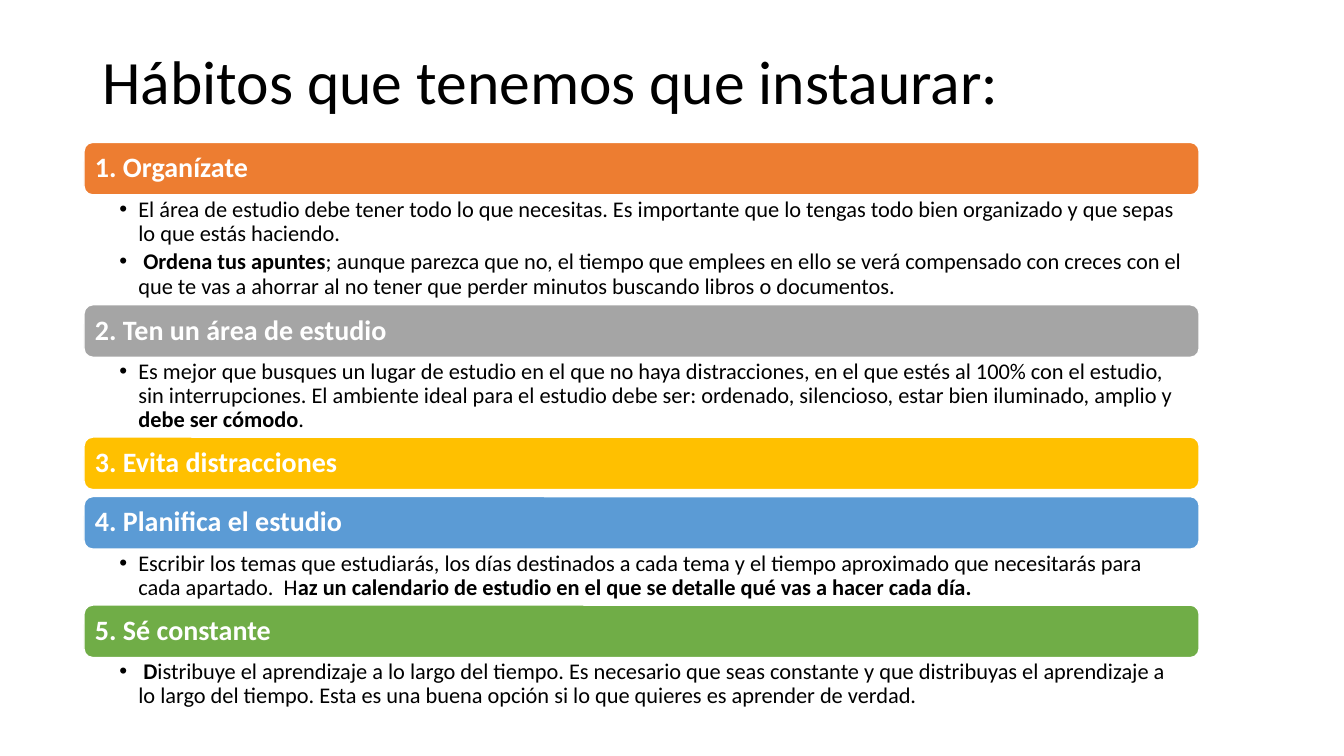
from lxml import etree
from pptx import Presentation
from pptx.dml.color import RGBColor
from pptx.enum.shapes import MSO_SHAPE
from pptx.enum.text import MSO_ANCHOR, MSO_AUTO_SIZE, PP_ALIGN
from pptx.oxml.ns import qn
from pptx.util import Pt

ROUND = MSO_SHAPE.ROUNDED_RECTANGLE
TOP, MIDDLE = MSO_ANCHOR.TOP, MSO_ANCHOR.MIDDLE
LEFT = PP_ALIGN.LEFT
FIXED = MSO_AUTO_SIZE.NONE

TITLE = "Hábitos que tenemos que instaurar:"
MARK = "**"
HABITS = [
    ("1. Organízate", "ED7D31", 78.5, [
        "El área de estudio debe tener todo lo que necesitas. Es importante que lo tengas "
        "todo bien organizado y que sepas lo que estás haciendo.",
        " **Ordena tus apuntes**; aunque parezca que no, el tiempo que emplees en ello se verá "
        "compensado con creces con el que te vas a ahorrar al no tener que perder minutos "
        "buscando libros o documentos.",
    ]),
    ("2. Ten un área de estudio", "A5A5A5", 57, [
        "Es mejor que busques un lugar de estudio en el que no haya distracciones, en el que "
        "estés al 100% con el estudio, sin interrupciones. El ambiente ideal para el estudio "
        "debe ser: ordenado, silencioso, estar bien iluminado, amplio y **debe ser cómodo**.",
    ]),
    ("3. Evita distracciones", "FFC000", 5, []),
    ("4. Planifica el estudio", "5B9BD5", 40, [
        "Escribir los temas que estudiarás, los días destinados a cada tema y el tiempo "
        "aproximado que necesitarás para cada apartado.  H**az un calendario de estudio en el "
        "que se detalle qué vas a hacer cada día.**",
    ]),
    ("5. Sé constante", "70AD47", 40, [
        "** D**istribuye el aprendizaje a lo largo del tiempo. Es necesario que seas constante "
        "y que distribuyas el aprendizaje a lo largo del tiempo. Esta es una buena opción si "
        "lo que quieres es aprender de verdad.",
    ]),
]
X, Y, WIDTH, BAR = 60, 101.7, 796.5, 37.5


def color(code):
    return RGBColor.from_string(code)


def place(shape, x, y, w, h):
    shape.left, shape.top, shape.width, shape.height = Pt(x), Pt(y), Pt(w), Pt(h)


def set_frame(frame, anchor, left, top, right):
    frame.word_wrap = True
    frame.auto_size = FIXED
    frame.vertical_anchor = anchor
    frame.margin_left, frame.margin_right = Pt(left), Pt(right)
    frame.margin_top = frame.margin_bottom = Pt(top)


def style(para, size, code, after=0):
    para.alignment = LEFT
    para.line_spacing = 0.9
    para.space_before, para.space_after = Pt(0), Pt(after)
    for run in para.runs:
        run.font.name = "Calibri"
        run.font.size = Pt(size)
        run.font.color.rgb = color(code)


def add_bullet(para):
    props = para._p.get_or_add_pPr()
    props.set("marL", str(Pt(13.5)))
    props.set("indent", str(Pt(-13.5)))
    etree.SubElement(props, qn("a:buFont")).set("typeface", "Arial")
    etree.SubElement(props, qn("a:buChar")).set("char", "•")


def add_bar(slide, y, name, code):
    bar = slide.shapes.add_shape(ROUND, Pt(X), Pt(y), Pt(WIDTH), Pt(BAR))
    bar.adjustments[0] = 0.1667
    bar.shadow.inherit = False
    bar.fill.solid()
    bar.fill.fore_color.rgb = color(code)
    bar.line.color.rgb = color("FFFFFF")
    bar.line.width = Pt(1)
    frame = bar.text_frame
    set_frame(frame, MIDDLE, 6, 4, 6)
    frame.text = name
    para = frame.paragraphs[0]
    style(para, 20, "FFFFFF")
    para.runs[0].font.bold = True


def fill_list(holder, y, height, items):
    place(holder, X, y, WIDTH, height)
    frame = holder.text_frame
    set_frame(frame, TOP, 25.3, 2, 11.5)
    for i, item in enumerate(items):
        para = frame.add_paragraph() if i else frame.paragraphs[0]
        for j, part in enumerate(item.split(MARK)):
            if part:
                run = para.add_run()
                run.text = part
                run.font.bold = j % 2 == 1
        style(para, 16, "000000", 3.2)
        add_bullet(para)


def main():
    deck = Presentation()
    deck.slide_width, deck.slide_height = Pt(960), Pt(540)
    slide = deck.slides.add_slide(deck.slide_layouts[4])

    title = slide.shapes.title
    place(title, 66, 8, 828, 104.5)
    set_frame(title.text_frame, MIDDLE, 7.2, 3.6, 7.2)
    title.text_frame.text = TITLE
    style(title.text_frame.paragraphs[0], 44, "000000")

    lists = iter(list(slide.placeholders)[1:])
    y = Y
    for name, code, height, items in HABITS:
        add_bar(slide, y, name, code)
        y += BAR
        if items:
            fill_list(next(lists), y, height, items)
        y += height

    deck.save("out.pptx")


if __name__ == "__main__":
    main()
